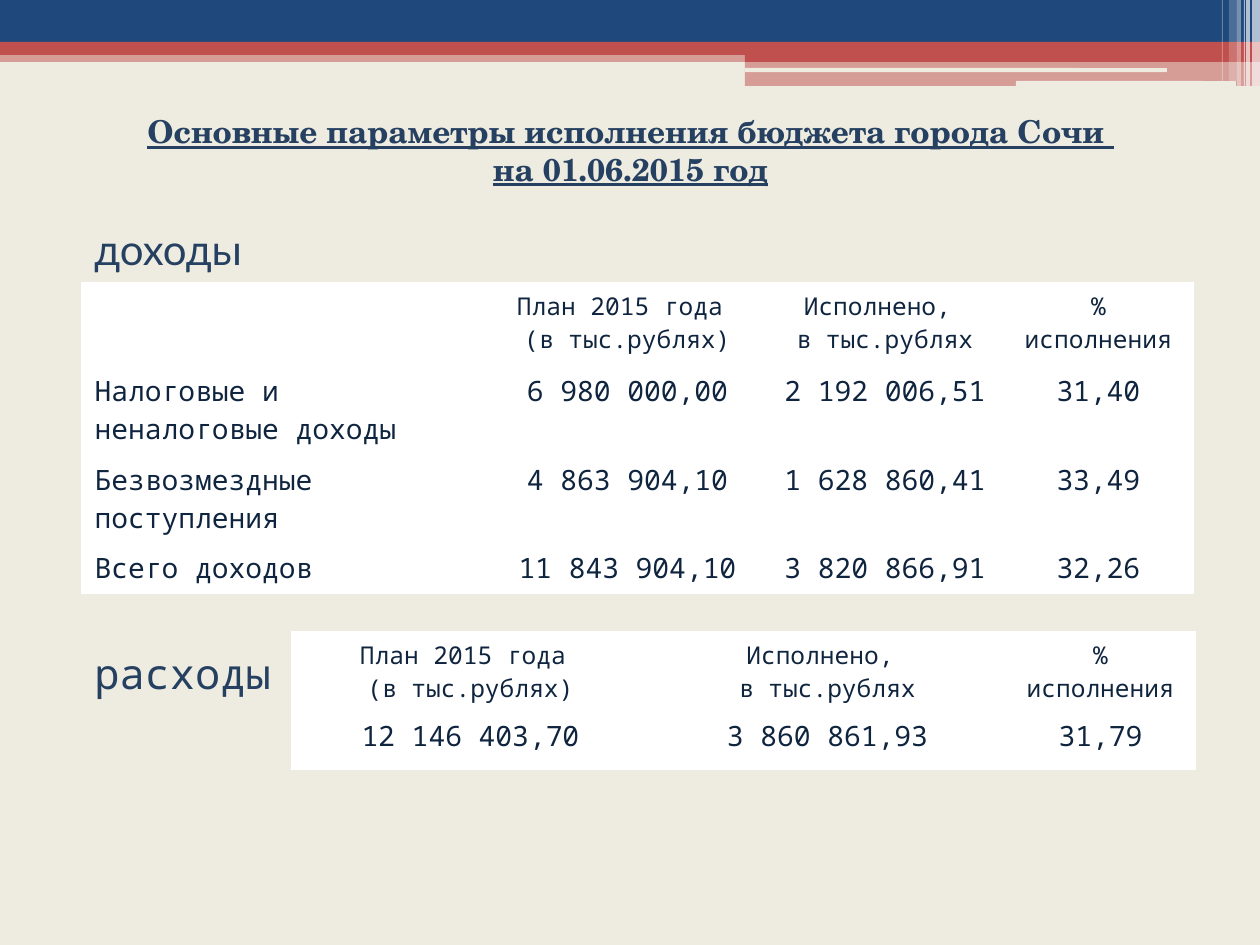
from dataclasses import dataclass

from lxml.etree import SubElement
from pptx import Presentation
from pptx.dml.color import RGBColor
from pptx.enum.shapes import MSO_SHAPE
from pptx.enum.text import MSO_ANCHOR, MSO_AUTO_SIZE, PP_ALIGN
from pptx.oxml.ns import qn
from pptx.util import Emu, Pt


@dataclass(frozen=True)
class Theme:
    paper: str = "EEECE1"
    blue: str = "1F497D"
    red: str = "C0504D"
    white: str = "FFFFFF"
    heading: str = "254061"
    ink: str = "0F243E"
    serif: str = "TeX Gyre Schola"
    sans: str = "Lato"
    mono: str = "Noto Sans Mono"
    title_size: int = 18
    label_size: int = 24
    header_size: int = 14
    body_size: int = 16


T = Theme()
EMU_PER_PX = 914400 / 126


def px(*values):
    return [Emu(round(v * EMU_PER_PX)) for v in values]


def write(tf, text, font, size, color, align, bold=False, underline=False):
    """Fill a text frame, one paragraph a line, in a single format."""
    tf.text = text
    tf.word_wrap = True
    for p in tf.paragraphs:
        p.alignment = align
        for r in p.runs:
            r.font.name, r.font.size = font, Pt(size)
            r.font.bold, r.font.underline = bold, underline
            r.font.color.rgb = RGBColor.from_string(color)


prs = Presentation()
prs.slide_width, prs.slide_height = px(1260, 945)
s = prs.slides.add_slide(prs.slide_layouts[5])
s.background.fill.solid()
s.background.fill.fore_color.rgb = RGBColor.from_string(T.paper)

# Header bands and the pale stripes at the right edge
RECT, ROUND = MSO_SHAPE.RECTANGLE, MSO_SHAPE.ROUNDED_RECTANGLE
bands = [  # preset, left, top, width, height, colour, opacity in percent
    (RECT, 0, 50, 1260, 12, T.red, 50),
    (RECT, 0, 0, 1260, 42, T.blue, 100),
    (RECT, 0, 42, 1260, 13, T.red, 100),
    (RECT, 745, 49, 515, 13, T.red, 100),
    (RECT, 745, 61, 515, 25, T.red, 50),
    (ROUND, 745, 68, 422, 4, T.paper, 100),
    (ROUND, 1016, 81, 220, 5, T.paper, 100),
]
stripes = [  # left, width, height, opacity
    (1252, 8, 86, 65), (1246, 4, 86, 65), (1244, 1, 86, 60),
    (1237, 4, 86, 40), (1229, 8, 81, 20), (1222, 1, 81, 30),
]
bands += [(RECT, x, 0, w, h, T.white, a) for x, w, h, a in stripes]
for preset, x, y, w, h, color, opacity in bands:
    sp = s.shapes.add_shape(preset, *px(x, y, w, h))
    sp.shadow.inherit = False
    sp.line.fill.background()
    sp.fill.solid()
    sp.fill.fore_color.rgb = RGBColor.from_string(color)
    if opacity < 100:
        clr = sp.fill._xPr.find(qn("a:solidFill"))[0]
        SubElement(clr, qn("a:alpha")).set("val", str(opacity * 1000))

# Title
title = s.shapes.title
title.left, title.top, title.width, title.height = px(30, 106, 1201, 89)
write(title.text_frame,
      "Основные параметры исполнения бюджета города Сочи \nна 01.06.2015 год",
      T.serif, T.title_size, T.heading, PP_ALIGN.CENTER, True, True)
title.text_frame.auto_size = MSO_AUTO_SIZE.NONE
title.text_frame.vertical_anchor = MSO_ANCHOR.TOP

# Section labels
for text, top, font in [("доходы", 217, T.sans), ("расходы", 641, T.mono)]:
    box = s.shapes.add_textbox(*px(82, top, 277, 63))
    write(box.text_frame, text, font, T.label_size, T.heading, PP_ALIGN.LEFT)

# Income and expense tables
header = ["План 2015 года \n(в тыс.рублях)", "Исполнено, \nв тыс.рублях", "% исполнения"]
income = [
    ["", *header],
    ["Налоговые и неналоговые доходы", "6 980 000,00", "2 192 006,51", "31,40"],
    ["Безвозмездные поступления", "4 863 904,10", "1 628 860,41", "33,49"],
    ["Всего доходов", "11 843 904,10", "3 820 866,91", "32,26"],
]
expenses = [header, ["12 146 403,70", "3 860 861,93", "31,79"]]
tables = [  # rows, left, top, column widths, row heights
    (income, 82, 283, [407, 277, 238, 189], [82, 89, 88, 51]),
    (expenses, 292, 632, [357, 357, 189], [78, 59]),
]
for rows, x, y, widths, heights in tables:
    frame = s.shapes.add_table(len(rows), len(widths),
                               *px(x, y, sum(widths), sum(heights)))
    table = frame.table
    for col, w in zip(table.columns, px(*widths)):
        col.width = w
    for row, h in zip(table.rows, px(*heights)):
        row.height = h
    for i, values in enumerate(rows):
        size = T.body_size if i else T.header_size
        for j, value in enumerate(values):
            cell = table.cell(i, j)
            cell.fill.solid()
            cell.fill.fore_color.rgb = RGBColor.from_string(T.white)
            named_row = rows is income and j == 0
            write(cell.text_frame, value, T.mono, size, T.ink,
                  PP_ALIGN.LEFT if named_row else PP_ALIGN.CENTER)

prs.save("out.pptx")
